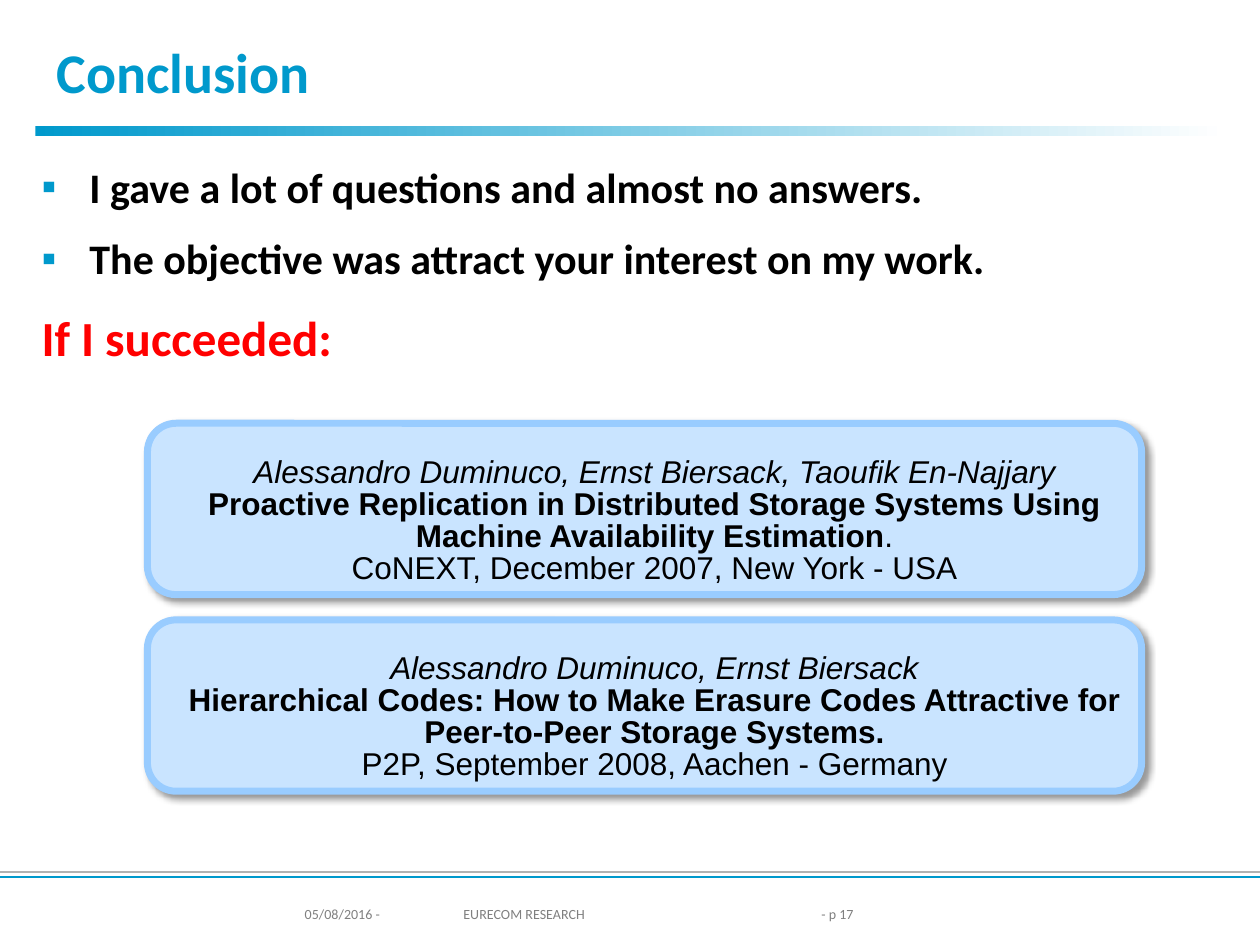
from lxml import etree
from pptx import Presentation
from pptx.dml.color import RGBColor
from pptx.enum.shapes import MSO_CONNECTOR, MSO_SHAPE
from pptx.enum.text import MSO_ANCHOR, MSO_AUTO_SIZE, PP_ALIGN
from pptx.oxml import parse_xml
from pptx.oxml.ns import nsdecls, qn
from pptx.util import Inches, Pt

RECTANGLE = MSO_SHAPE.RECTANGLE
ROUNDED = MSO_SHAPE.ROUNDED_RECTANGLE
STRAIGHT = MSO_CONNECTOR.STRAIGHT
LEFT, CENTER = PP_ALIGN.LEFT, PP_ALIGN.CENTER
TOP, MIDDLE = MSO_ANCHOR.TOP, MSO_ANCHOR.MIDDLE

WHITE = RGBColor(0xFF, 0xFF, 0xFF)
BLACK = RGBColor(0x00, 0x00, 0x00)
RED = RGBColor(0xFF, 0x00, 0x00)
BLUE = RGBColor(0x00, 0x99, 0xCC)
GRAY = RGBColor(0x80, 0x80, 0x80)
RULE_GRAY = RGBColor(0xB2, 0xB2, 0xB2)
CARD_FILL = RGBColor(0xC9, 0xE4, 0xFF)
CARD_LINE = RGBColor(0x99, 0xCC, 0xFF)

CARD_TOP, CARD_PITCH = 3.36, 1.56
PUBLICATIONS = [
    ("Alessandro Duminuco, Ernst Biersack, Taoufik En-Najjary",
     "Proactive Replication in Distributed Storage Systems Using "
     "Machine Availability Estimation", ".",
     "CoNEXT, December 2007, New York - USA"),
    ("Alessandro Duminuco, Ernst Biersack",
     "Hierarchical Codes: How to Make Erasure Codes Attractive for "
     "Peer-to-Peer Storage Systems.", "",
     "P2P, September 2008, Aachen - Germany"),
]
FOOTERS = [
    ("05/08/2016 -", 2.32, 1.18),
    ("EURECOM RESEARCH", 3.58, 2.76),
    ("- p 17", 6.42, 0.79),
]


def place(shape, left, top, width, height):
    shape.left, shape.top = Inches(left), Inches(top)
    shape.width, shape.height = Inches(width), Inches(height)


def prepare_frame(shape, anchor=TOP):
    frame = shape.text_frame
    frame.word_wrap = True
    frame.auto_size = MSO_AUTO_SIZE.NONE
    frame.vertical_anchor = anchor
    return frame


def add_paragraph(frame, align=LEFT, before=0, spacing=1.0):
    """Use the empty first paragraph, or append a new one."""
    first = frame.paragraphs[0]
    paragraph = frame.add_paragraph() if first.runs else first
    paragraph.alignment = align
    paragraph.space_before = Pt(before)
    paragraph.space_after = Pt(0)
    paragraph.line_spacing = spacing
    return paragraph


def add_text(paragraph, text, size=18, font="Calibri", color=BLACK,
             bold=False, italic=False):
    run = paragraph.add_run()
    run.text = text
    run.font.size, run.font.name = Pt(size), font
    run.font.bold, run.font.italic = bold, italic
    run.font.color.rgb = color


def set_bullet(paragraph, character=None):
    """Hang the paragraph, with a blue bullet if a character is given."""
    properties = paragraph._p.get_or_add_pPr()
    properties.set("marL", str(Inches(0.38)))
    properties.set("indent", str(-Inches(0.38)))
    if character is None:
        etree.SubElement(properties, qn("a:buNone"))
        return
    color = etree.SubElement(properties, qn("a:buClr"))
    etree.SubElement(color, qn("a:srgbClr"), val=str(BLUE))
    etree.SubElement(properties, qn("a:buFont"), typeface="Arial")
    etree.SubElement(properties, qn("a:buChar"), char=character)


def add_rule(slide, top, color):
    line = slide.shapes.add_connector(
        STRAIGHT, 0, Inches(top), Inches(10), Inches(top))
    line.line.color.rgb = color
    line.line.width = Pt(1.5)
    etree.SubElement(line._element.spPr, qn("a:effectLst"))


def add_gradient_bar(slide):
    bar = slide.shapes.add_shape(
        RECTANGLE, Inches(0.28), Inches(1), Inches(9.45), Inches(0.08))
    bar.shadow.inherit = False
    bar.line.fill.background()
    bar.fill.gradient()
    bar.fill.gradient_angle = 0
    for stop, color, position in zip(bar.fill.gradient_stops, (BLUE, WHITE), (0, 1)):
        stop.color.rgb = color
        stop.position = position


def add_card(slide, top, authors, title, ending, venue):
    card = slide.shapes.add_shape(
        ROUNDED, Inches(1.17), Inches(top), Inches(7.89), Inches(1.36))
    card.fill.solid()
    card.fill.fore_color.rgb = CARD_FILL
    card.line.color.rgb = CARD_LINE
    card.line.width = Pt(4)
    card._element.spPr.append(parse_xml(
        f'<a:effectLst {nsdecls("a")}>'
        f'<a:outerShdw blurRad="{Pt(4)}" dist="{Pt(3)}" dir="2700000" algn="tl">'
        '<a:srgbClr val="000000"><a:alpha val="40000"/></a:srgbClr>'
        '</a:outerShdw></a:effectLst>'))

    box = slide.shapes.add_textbox(
        Inches(1.25), Inches(top + 0.11), Inches(7.89), Inches(1.27))
    frame = prepare_frame(box)
    frame.margin_top = Inches(0.16)
    layout = {"align": CENTER, "spacing": 0.85}
    add_text(add_paragraph(frame, **layout), authors, font="Arial", italic=True)
    heading = add_paragraph(frame, **layout)
    add_text(heading, title, font="Arial", bold=True)
    if ending:
        add_text(heading, ending, font="Arial")
    add_text(add_paragraph(frame, **layout), venue, font="Arial")


def fill_title(title):
    place(title, 0.35, 0.21, 9.37, 0.71)
    frame = prepare_frame(title, MIDDLE)
    add_text(add_paragraph(frame), "Conclusion", size=32, color=BLUE, bold=True)


def fill_body(body):
    place(body, 0.23, 1.23, 9.53, 5.59)
    frame = prepare_frame(body)
    lines = [
        ("I gave a lot of questions and almost no answers.", "▪", 0, 24, BLACK),
        ("The objective was attract your interest on my work.", "▪", 12, 24, BLACK),
        ("If I succeeded:", None, 14, 28, RED),
    ]
    for text, bullet, before, size, color in lines:
        paragraph = add_paragraph(frame, before=before)
        set_bullet(paragraph, bullet)
        add_text(paragraph, text, size=size, color=color, bold=True)


def add_footer(slide, text, left, width):
    box = slide.shapes.add_textbox(
        Inches(left), Inches(7.14), Inches(width), Inches(0.22))
    add_text(add_paragraph(prepare_frame(box)), text, size=8, color=GRAY)


def main():
    presentation = Presentation()
    presentation.slide_width, presentation.slide_height = Inches(10), Inches(7.5)
    slide = presentation.slides.add_slide(presentation.slide_layouts[1])

    # Header bar and footer rules
    add_gradient_bar(slide)
    add_rule(slide, 6.92, RULE_GRAY)
    add_rule(slide, 6.96, BLUE)

    # Title and list
    fill_title(slide.shapes.title)
    fill_body(slide.placeholders[1])

    # Footer texts
    for footer in FOOTERS:
        add_footer(slide, *footer)

    # Publication cards
    for index, publication in enumerate(PUBLICATIONS):
        add_card(slide, CARD_TOP + index * CARD_PITCH, *publication)

    presentation.save("out.pptx")


if __name__ == "__main__":
    main()
